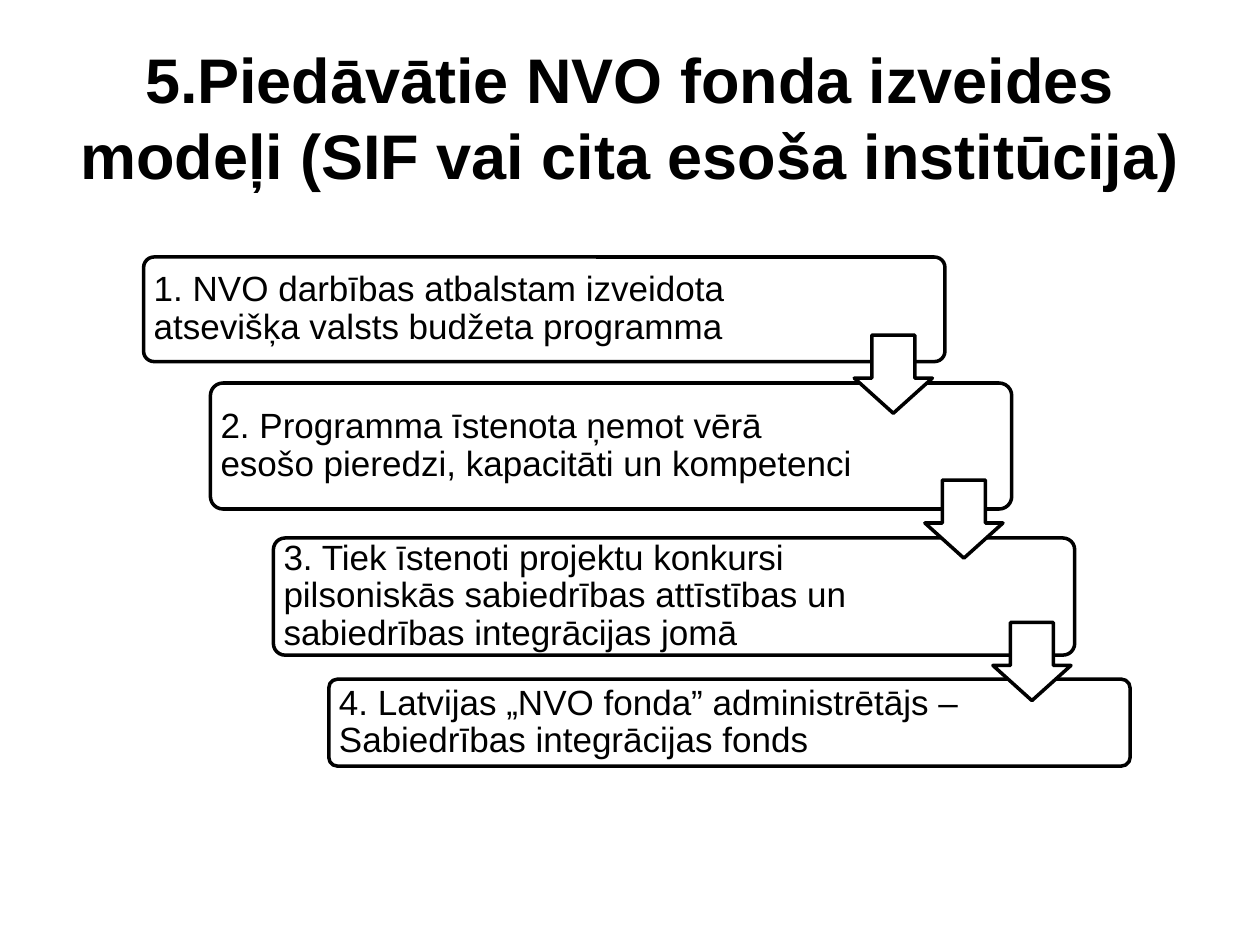
from pptx import Presentation, util as u
from pptx.dml.color import RGBColor
from pptx.enum import shapes, text

COLS, ROWS = 100, 75
STEPS = [  # left, top, height, text width, wording
    (11.4, 20.4, 8.3, 53.1, "1. NVO darbības atbalstam izveidota atsevišķa valsts budžeta programma"),
    (16.7, 30.4, 10, 52.1, "2. Programma īstenota ņemot vērā esošo pieredzi, kapacitāti un kompetenci"),
    (21.7, 42.7, 9.3, 52.2, "3. Tiek īstenoti projektu konkursi pilsoniskās sabiedrības attīstības "
                            "un sabiedrības integrācijas jomā"),
    (26.1, 53.9, 6.9, 52.1, "4. Latvijas „NVO fonda” administrētājs – Sabiedrības integrācijas fonds"),
]
STEP_WIDTH = 63.6
ARROWS = [(67.8, 26.6), (73.4, 38.1), (78.8, 49.4)]
ARROW_SIZE = 6.2


def color(code):
    return RGBColor.from_string(code)


class Deck:
    font, ink, paper = "Arial", "000000", "FFFFFF"
    line, body, head = 2, 20, 36

    def __init__(self):
        self.prs = Presentation()
        self.prs.slide_width, self.prs.slide_height = u.Inches(10), u.Inches(7.5)
        self.slide = self.prs.slides.add_slide(self.prs.slide_layouts[5])
        self.group = self.slide.shapes.add_group_shape().shapes

    def grid(self, left, top, width, height):
        """Turn columns and rows into slide lengths."""
        col, row = self.prs.slide_width / COLS, self.prs.slide_height / ROWS
        return [round(v) for v in (left * col, top * row, width * col, height * row)]

    def fill_text(self, frame, words, size, bold=False):
        frame.word_wrap = True
        frame.auto_size = text.MSO_AUTO_SIZE.NONE
        frame.vertical_anchor = text.MSO_ANCHOR.MIDDLE
        para = frame.paragraphs[0]
        run = para.add_run()
        run.text = words
        run.font.name, run.font.size, run.font.bold = self.font, u.Pt(size), bold
        run.font.color.rgb = color(self.ink)
        return para

    def title(self, words, *cell):
        box = self.slide.shapes.title
        box.left, box.top, box.width, box.height = self.grid(*cell)
        para = self.fill_text(box.text_frame, words, self.head, bold=True)
        para.alignment = text.PP_ALIGN.CENTER

    def shape(self, kind, cell, *adjust):
        item = self.group.add_shape(kind, *self.grid(*cell))
        item.shadow.inherit = False
        item.fill.solid()
        item.fill.fore_color.rgb = color(self.paper)
        item.line.color.rgb = color(self.ink)
        item.line.width = u.Pt(self.line)
        for i, value in enumerate(adjust):
            item.adjustments[i] = value

    def label(self, words, *cell):
        frame = self.group.add_textbox(*self.grid(*cell)).text_frame
        frame.margin_left = frame.margin_right = u.Inches(0.08)
        frame.margin_top = frame.margin_bottom = u.Inches(0.08)
        para = self.fill_text(frame, words, self.body)
        para.alignment = text.PP_ALIGN.LEFT
        para.line_spacing = 0.9
        para.space_after = u.Pt(0.35 * self.body)

    def step(self, left, top, height, width, words):
        self.shape(shapes.MSO_SHAPE.ROUNDED_RECTANGLE, (left, top, STEP_WIDTH, height), 0.1)
        self.label(words, left, top, width, height)

    def arrow(self, left, top):
        self.shape(shapes.MSO_SHAPE.DOWN_ARROW, (left, top, ARROW_SIZE, ARROW_SIZE), 0.55, 0.45)


def main():
    deck = Deck()
    deck.title("5.Piedāvātie NVO fonda izveides modeļi (SIF vai cita esoša institūcija)",
               5, 3, 90, 12.5)
    for step in STEPS:
        deck.step(*step)
    for spot in ARROWS:
        deck.arrow(*spot)
    deck.prs.save("out.pptx")


if __name__ == "__main__":
    main()
